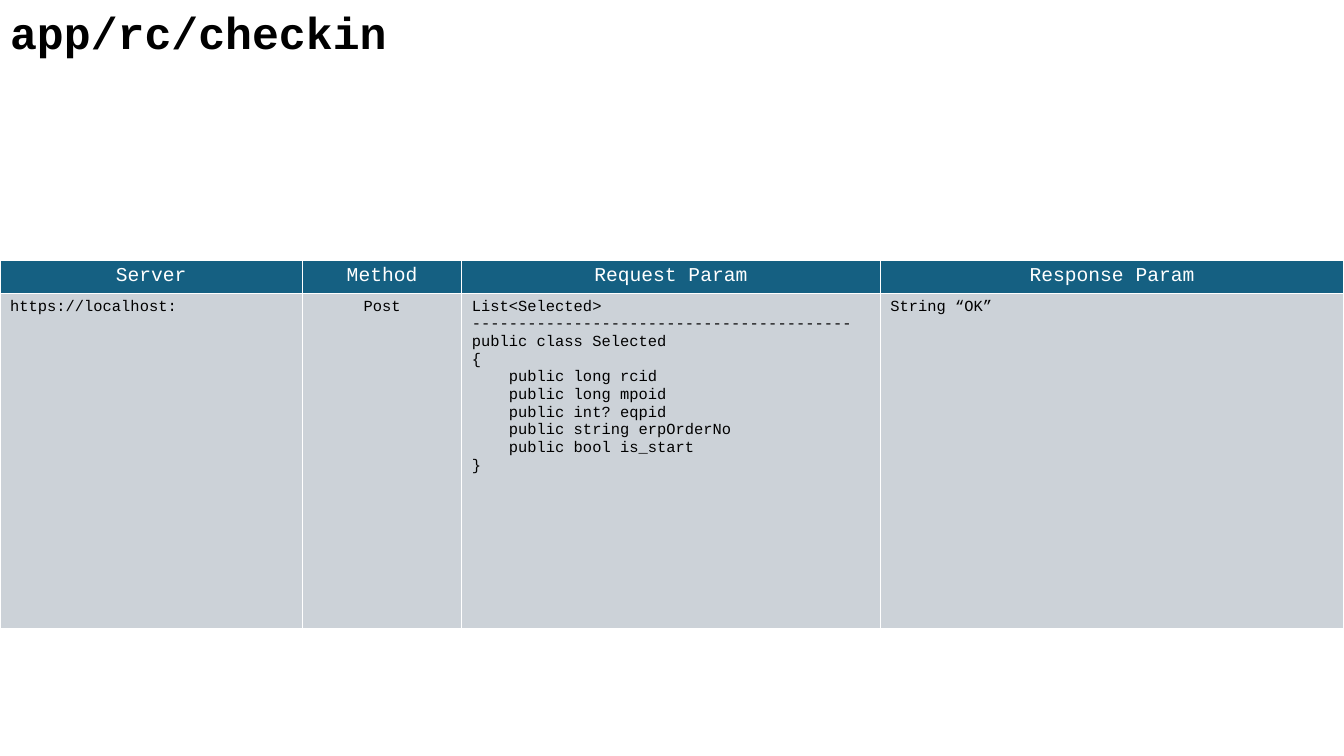
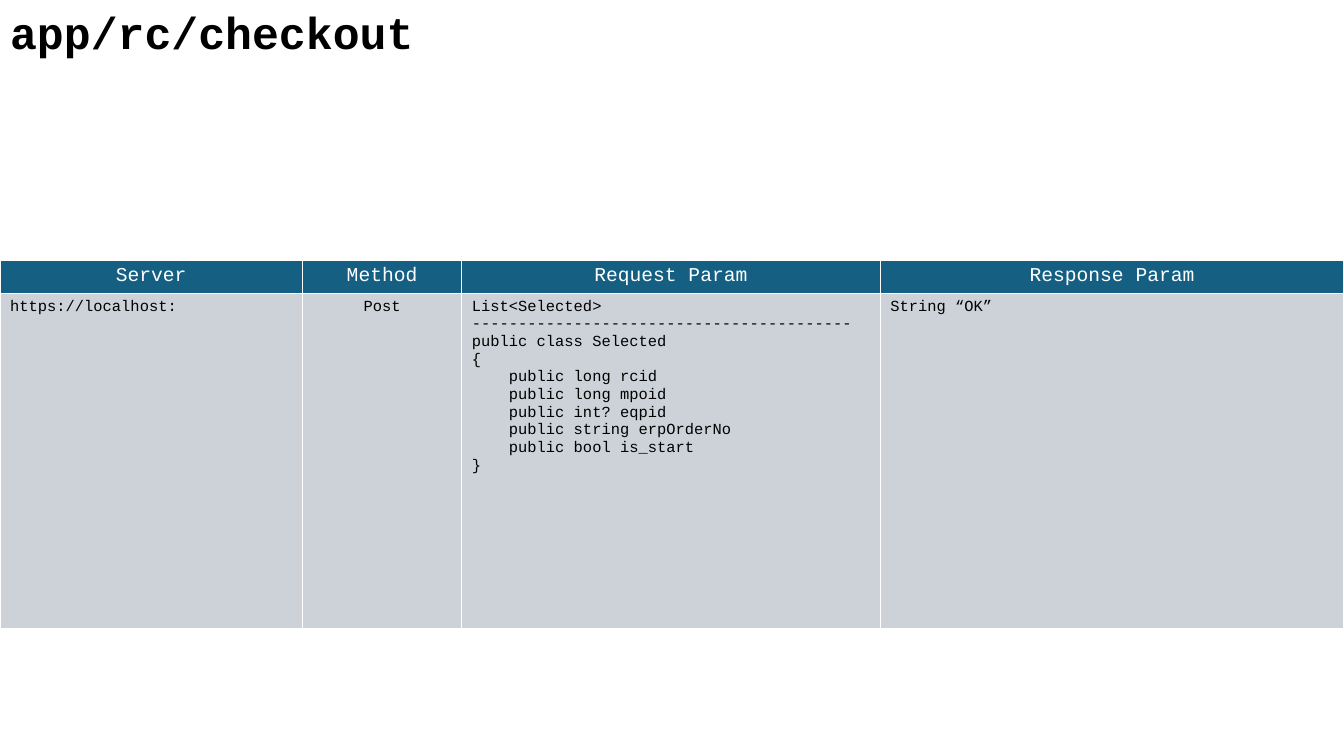
from lxml import etree
from pptx import Presentation
from pptx.dml.color import RGBColor
from pptx.enum import text
from pptx.oxml import ns
from pptx.util import Inches, Pt

# Shared style
FONT = "Courier New"
BLACK = RGBColor(0x00, 0x00, 0x00)
WHITE = RGBColor(0xFF, 0xFF, 0xFF)
HEADER_BLUE = RGBColor(0x15, 0x60, 0x82)
BODY_GREY = RGBColor(0xCC, 0xD2, 0xD8)
LEFT, CENTER = text.PP_ALIGN.LEFT, text.PP_ALIGN.CENTER

# Table layout, in inches
TABLE_TOP = 2.58
COLUMN_WIDTHS = [3, 1.58, 4.15, 4.6]
ROW_HEIGHTS = [0.33, 3.33]

# Content
TITLE_ONLY = 5
ENDPOINTS = ["app/rc/checkin", "app/rc/checkout"]
HEADERS = ["Server", "Method", "Request Param", "Response Param"]
REQUEST = """List<Selected>
-----------------------------------------
public class Selected
{
    public long rcid
    public long mpoid
    public int? eqpid
    public string erpOrderNo
    public bool is_start
}"""
VALUES = ["https://localhost:", "Post", REQUEST, "String “OK”"]
VALUE_ALIGNMENTS = [LEFT, CENTER, LEFT, LEFT]


def write_text(frame, content, size, color=BLACK, bold=False, align=LEFT):
    """Fill a text frame, one paragraph per line."""
    frame.text = content
    for paragraph in frame.paragraphs:
        paragraph.alignment = align
        for run in paragraph.runs:
            run.font.name = FONT
            run.font.size = Pt(size)
            run.font.bold = bold
            run.font.color.rgb = color


def set_borders(cell, color=WHITE, width=1):
    properties = cell._tc.get_or_add_tcPr()
    for side in ("a:lnL", "a:lnR", "a:lnT", "a:lnB"):
        line = etree.SubElement(properties, ns.qn(side), w=str(Pt(width)))
        fill = etree.SubElement(line, ns.qn("a:solidFill"))
        etree.SubElement(fill, ns.qn("a:srgbClr"), val=str(color))


def format_cell(cell, content, fill, **text_format):
    set_borders(cell)
    cell.fill.solid()
    cell.fill.fore_color.rgb = fill
    write_text(cell.text_frame, content, **text_format)


def place_title(layout):
    """Set the title position once, for every slide of the layout."""
    title = layout.placeholders[0]
    title.left, title.top = Inches(0), Inches(0)
    title.width, title.height = Inches(9.45), Inches(0.64)
    frame = title.text_frame
    frame.vertical_anchor = text.MSO_ANCHOR.TOP
    frame.auto_size = text.MSO_AUTO_SIZE.NONE
    frame.word_wrap = True


def add_parameter_table(slide):
    frame = slide.shapes.add_table(
        len(ROW_HEIGHTS), len(COLUMN_WIDTHS), Inches(0), Inches(TABLE_TOP),
        Inches(sum(COLUMN_WIDTHS)), Inches(sum(ROW_HEIGHTS)))
    table = frame.table
    for row, height in zip(table.rows, ROW_HEIGHTS):
        row.height = Inches(height)
    for column, width in zip(table.columns, COLUMN_WIDTHS):
        column.width = Inches(width)
    for index, header in enumerate(HEADERS):
        format_cell(table.cell(0, index), header, HEADER_BLUE,
                    size=14, color=WHITE, align=CENTER)
        format_cell(table.cell(1, index), VALUES[index], BODY_GREY,
                    size=11, align=VALUE_ALIGNMENTS[index])


def main():
    presentation = Presentation()
    presentation.slide_width = Inches(13.33)
    presentation.slide_height = Inches(7.5)
    layout = presentation.slide_layouts[TITLE_ONLY]
    place_title(layout)

    # One slide per endpoint
    for endpoint in ENDPOINTS:
        slide = presentation.slides.add_slide(layout)
        write_text(slide.shapes.title.text_frame, endpoint, size=32, bold=True)
        add_parameter_table(slide)

    presentation.save("out.pptx")


if __name__ == "__main__":
    main()
